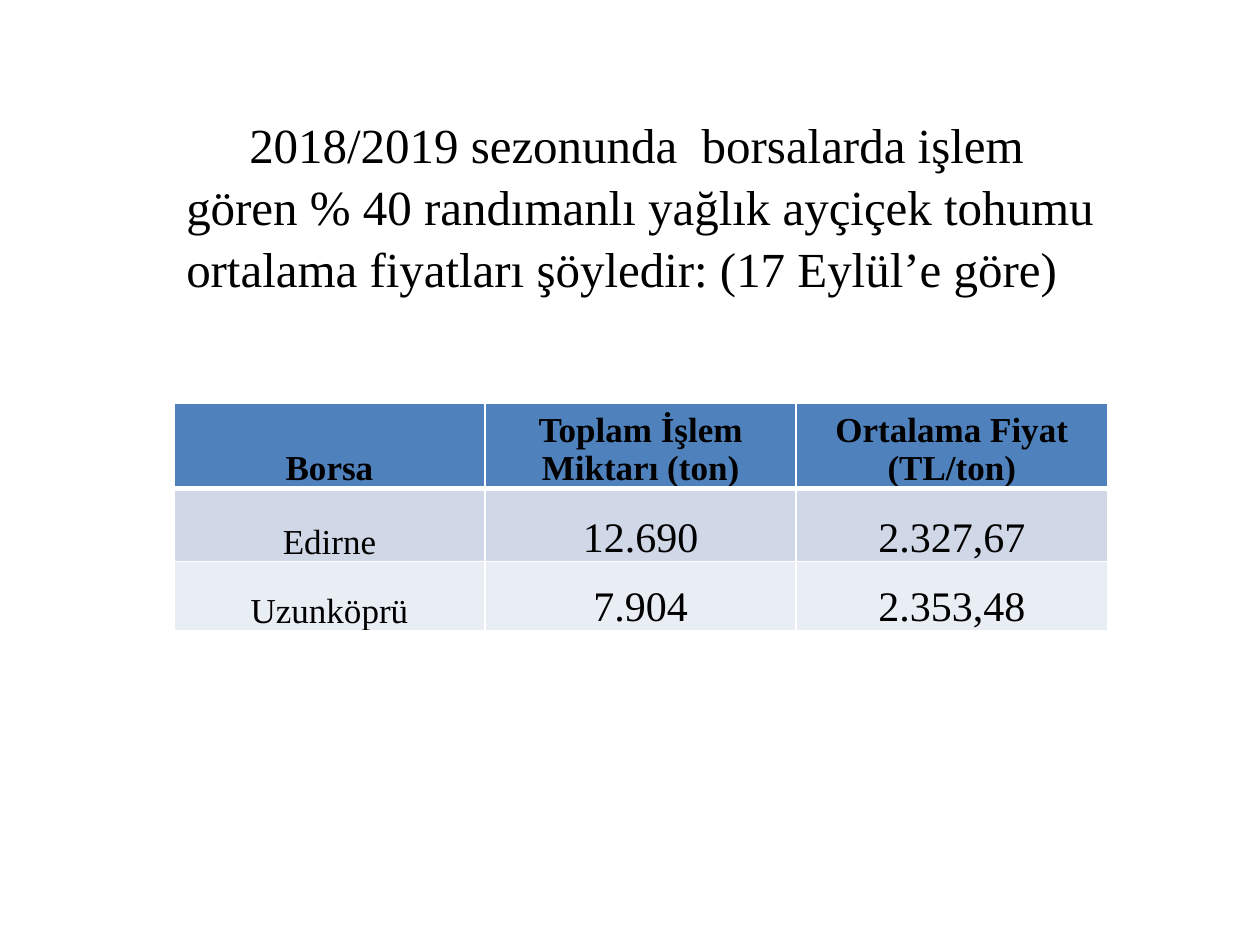
from dataclasses import dataclass

from lxml import etree
from pptx import Presentation
from pptx import util as u
from pptx.dml import color
from pptx.enum import text
from pptx.oxml import ns


@dataclass(frozen=True)
class Theme:
    font: str = "Times New Roman"
    ink: str = "000000"
    line: str = "FFFFFF"
    head: str = "4F81BD"
    bands: tuple = ("D0D8E8", "E9EDF4")
    lead: int = 28
    label: int = 20
    value: int = 24


THEME = Theme()
LEAD = (
    "\t2018/2019 sezonunda  borsalarda işlem gören % 40 randımanlı yağlık "
    "ayçiçek tohumu ortalama fiyatları şöyledir: (17 Eylül’e göre)"
)
ROWS = (
    ("Borsa", "Toplam İşlem Miktarı (ton)", "Ortalama Fiyat (TL/ton)"),
    ("Edirne", "12.690", "2.327,67"),
    ("Uzunköprü", "7.904", "2.353,48"),
)
HEIGHTS = (0.67, 0.58, 0.55)


def apply(item, form):
    for name, value in form.items():
        setattr(item, name, value)


def write(para, words, size, bold=False):
    run = para.add_run()
    run.text = words
    apply(run.font, {"name": THEME.font, "size": u.Pt(size), "bold": bold})
    run.font.color.rgb = color.RGBColor.from_string(THEME.ink)


def edge(cell, side, width):
    line = etree.SubElement(
        cell._tc.get_or_add_tcPr(), ns.qn(f"a:ln{side}"), w=str(u.Pt(width))
    )
    fill = etree.SubElement(line, ns.qn("a:solidFill"))
    etree.SubElement(fill, ns.qn("a:srgbClr"), val=THEME.line)


def add_lead(slide, box):
    frame = slide.shapes.add_textbox(*map(u.Inches, box)).text_frame
    apply(frame, {
        "word_wrap": True,
        "auto_size": text.MSO_AUTO_SIZE.SHAPE_TO_FIT_TEXT,
    })
    para = frame.paragraphs[0]
    para.line_spacing = 1.05
    write(para, LEAD, THEME.lead)


def fill_cell(cell, words, row, col):
    head = row == 0
    apply(cell, {
        "vertical_anchor": text.MSO_ANCHOR.BOTTOM,
        "margin_left": u.Inches(0.01),
        "margin_right": u.Inches(0.01),
        "margin_top": u.Inches(0.01),
        "margin_bottom": 0,
    })
    for side in "LRTB":
        heavy = (head and side == "B") or (row == 1 and side == "T")
        edge(cell, side, 3 if heavy else 1)
    cell.fill.solid()
    shade = THEME.head if head else THEME.bands[(row - 1) % 2]
    cell.fill.fore_color.rgb = color.RGBColor.from_string(shade)
    para = cell.text_frame.paragraphs[0]
    para.alignment = text.PP_ALIGN.CENTER
    size = THEME.label if head or col == 0 else THEME.value
    write(para, words, size, head)


def add_prices(slide, box):
    table = slide.shapes.add_table(
        len(ROWS), len(ROWS[0]), *map(u.Inches, box)
    ).table
    for col in table.columns:
        col.width = u.Inches(box[2] / len(ROWS[0]))
    for row, high in zip(table.rows, HEIGHTS):
        row.height = u.Inches(high)
    for row, items in enumerate(ROWS):
        for col, words in enumerate(items):
            fill_cell(table.cell(row, col), words, row, col)


def main():
    deck = Presentation()
    apply(deck, {"slide_width": u.Inches(10), "slide_height": u.Inches(7.5)})
    slide = deck.slides.add_slide(deck.slide_layouts[6])
    add_lead(slide, (1.38, 0.84, 7.72, 1.51))
    add_prices(slide, (1.38, 3.2, 7.41, sum(HEIGHTS)))
    deck.save("out.pptx")


if __name__ == "__main__":
    main()
